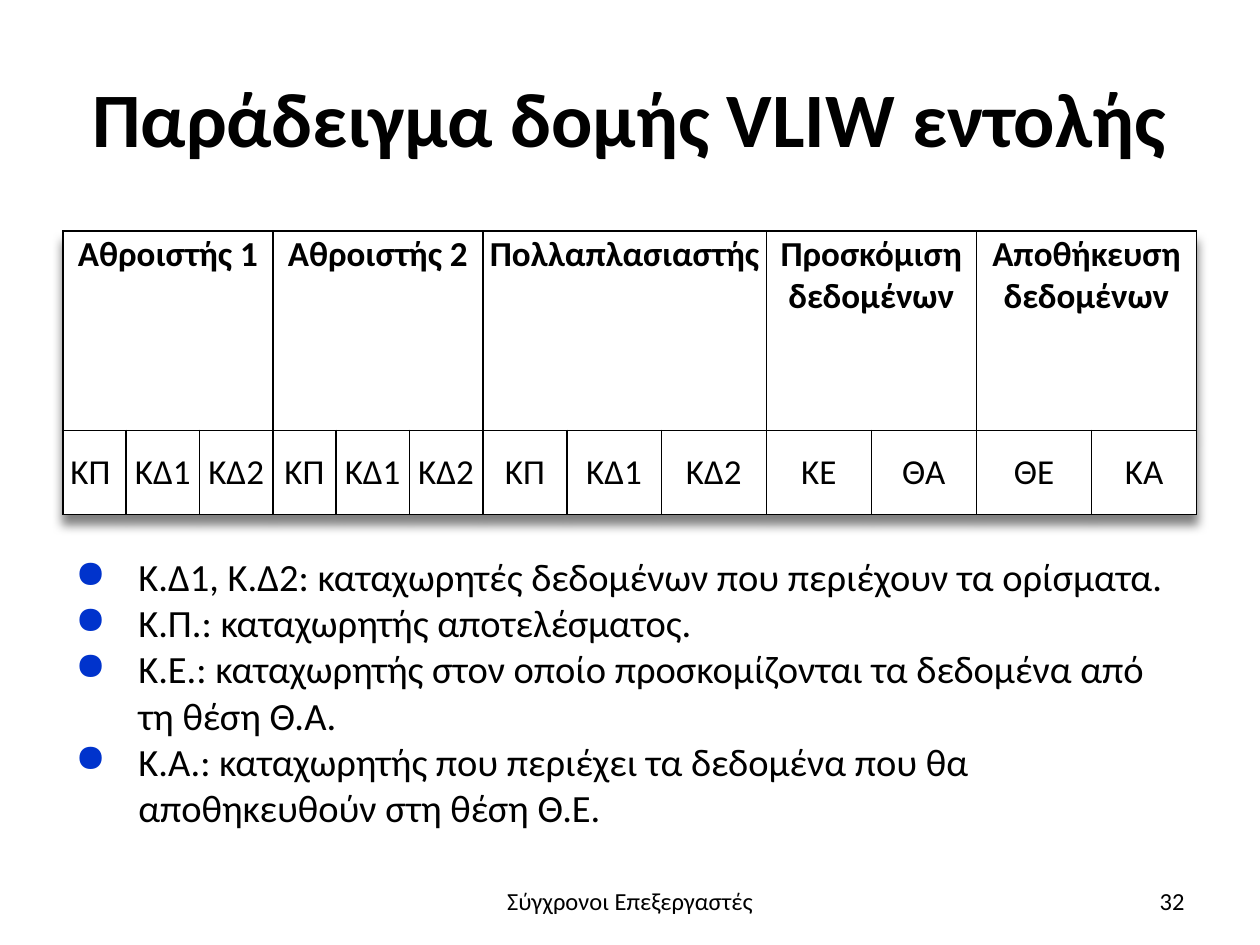
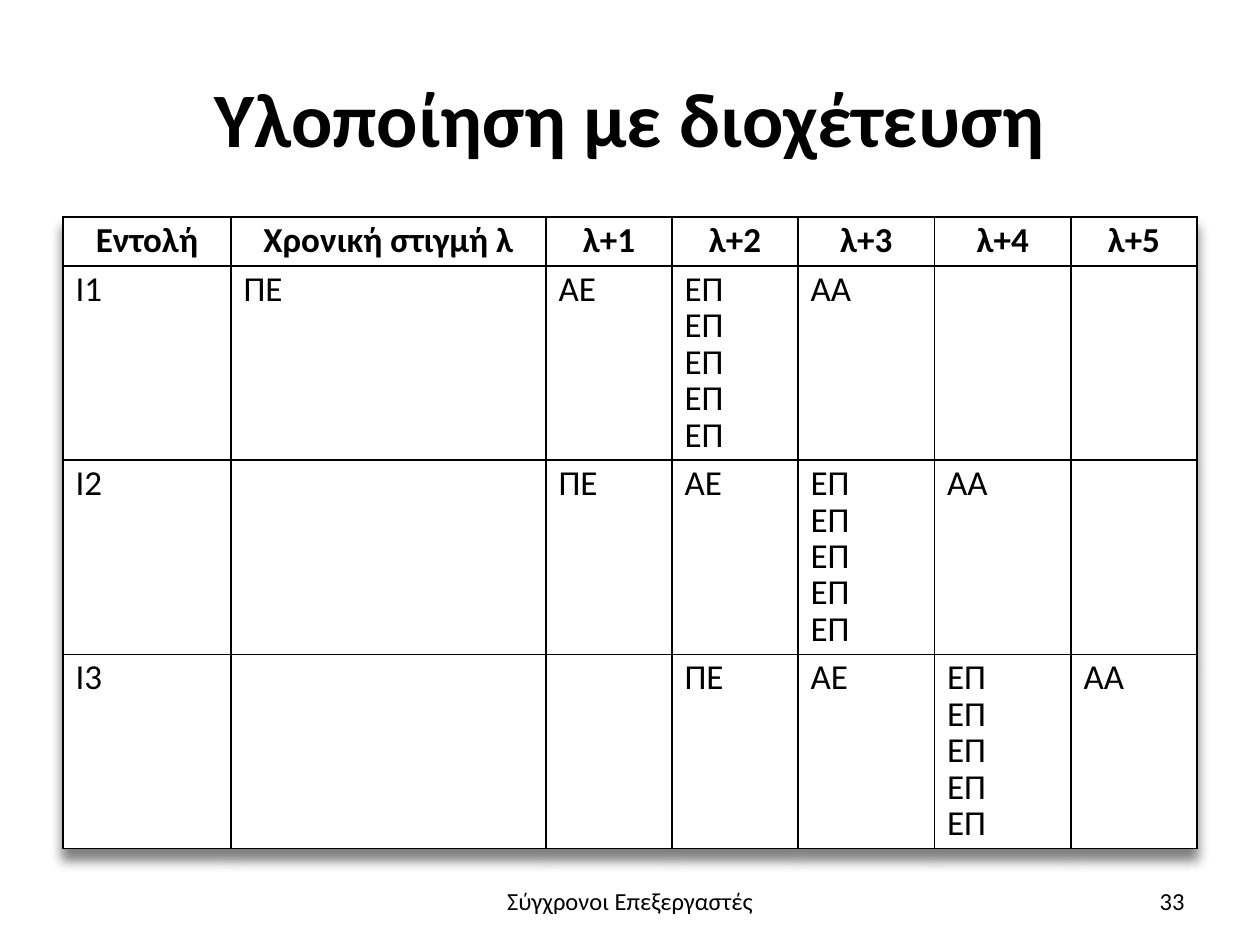
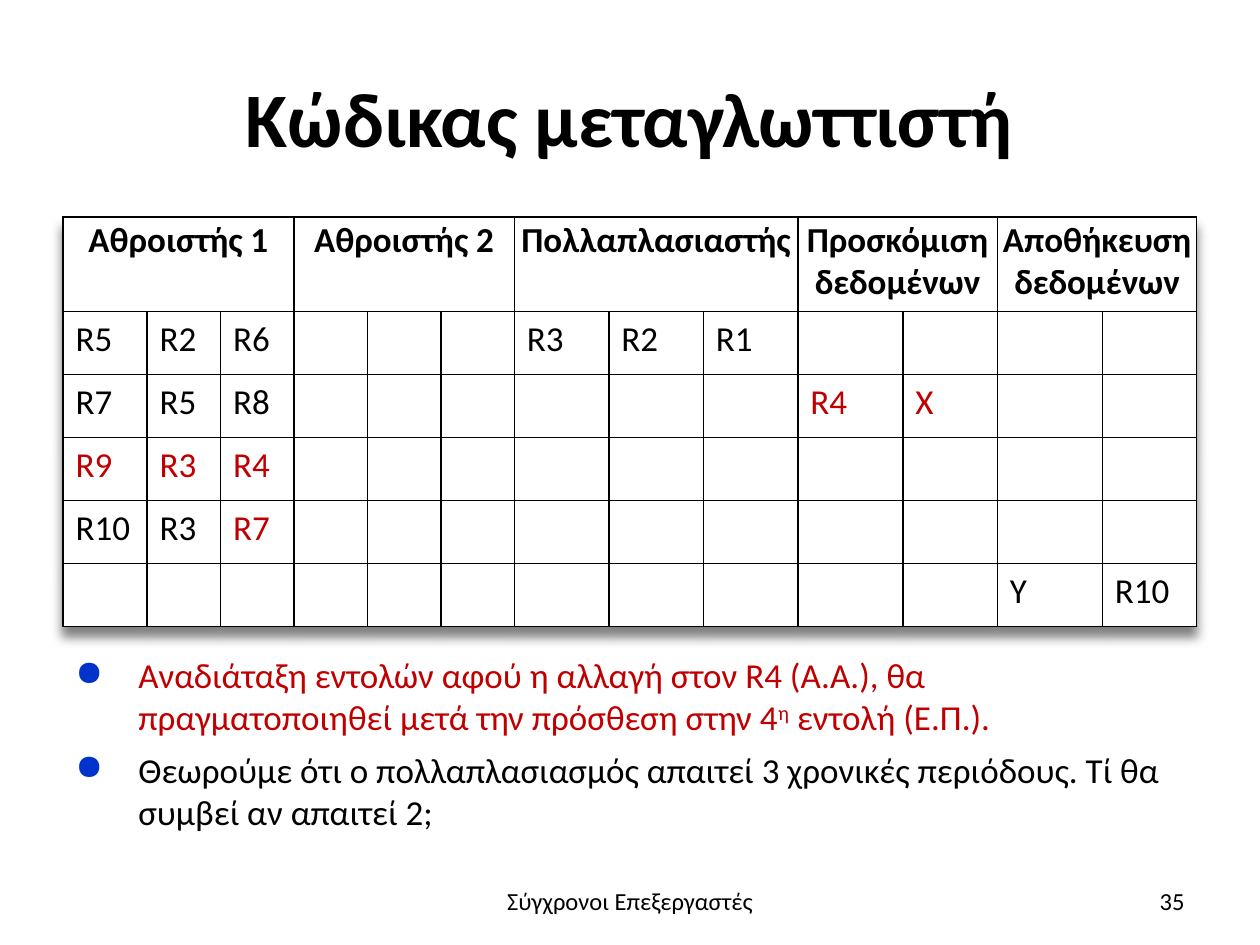
import dataclasses

import lxml.etree
import pptx
import pptx.dml.color
import pptx.enum.text
import pptx.oxml
import pptx.oxml.ns
import pptx.util

Pt = pptx.util.Pt
ALIGN = pptx.enum.text.PP_ALIGN
ANCHOR = pptx.enum.text.MSO_ANCHOR


@dataclasses.dataclass(frozen=True)
class Theme:
    font: str = "Calibri"
    ink: str = "000000"
    paper: str = "FFFFFF"
    accent: str = "C00000"
    bullet: str = "0033CC"
    title_size: int = 44
    list_size: int = 22
    table_size: int = 20
    footer_size: int = 14
    margin: int = 36
    border: int = 1
    tight_insets: tuple = (1, 1, 1, 1)
    normal_insets: tuple = (7.2, 3.6, 7.2, 3.6)


THEME = Theme()
FOOTER = "Σύγχρονοι Επεξεργαστές"
UNITS = [
    ("Αθροιστής 1", 3),
    ("Αθροιστής 2", 3),
    ("Πολλαπλασιαστής", 3),
    ("Προσκόμιση δεδομένων", 2),
    ("Αποθήκευση δεδομένων", 2),
]


def add_xml(parent, tag, **attributes):
    return lxml.etree.SubElement(parent, pptx.oxml.ns.qn(tag), attributes)


def add_run(paragraph, text, size, color=THEME.ink, bold=False, superscript=False):
    run = paragraph.add_run()
    run.text = text
    run.font.name = THEME.font
    run.font.size = Pt(size)
    run.font.bold = bold
    run.font.color.rgb = pptx.dml.color.RGBColor.from_string(color)
    if superscript:
        run._r.get_or_add_rPr().set("baseline", "30000")


def add_text_frame(slide, left, top, width, height, anchor=ANCHOR.TOP):
    shape = slide.shapes.add_textbox(Pt(left), Pt(top), Pt(width), Pt(height))
    frame = shape.text_frame
    frame.word_wrap = True
    frame.vertical_anchor = anchor
    return frame


def add_label(slide, text, box, size, align=ALIGN.CENTER, bold=False):
    paragraph = add_text_frame(slide, *box, anchor=ANCHOR.MIDDLE).paragraphs[0]
    paragraph.alignment = align
    add_run(paragraph, text, size, bold=bold)


def add_slide(presentation, title, number):
    slide = presentation.slides.add_slide(presentation.slide_layouts[6])
    add_label(slide, title, (THEME.margin, 21.6, 648, 90), THEME.title_size, bold=True)
    add_label(slide, FOOTER, (246, 500.4, 228, 28.8), THEME.footer_size)
    add_label(slide, str(number), (516, 500.4, 168, 28.8), THEME.footer_size, ALIGN.RIGHT)
    return slide


def add_bullets(slide, top, height, items, size, gap=0):
    frame = add_text_frame(slide, THEME.margin, top, 648, height)
    for index, runs in enumerate(items):
        paragraph = frame.paragraphs[0] if index == 0 else frame.add_paragraph()
        paragraph.space_before = Pt(gap if index else 0)
        properties = paragraph._p.get_or_add_pPr()
        properties.set("marL", str(Pt(36)))
        properties.set("indent", str(-Pt(36)))
        add_xml(add_xml(properties, "a:buClr"), "a:srgbClr", val=THEME.bullet)
        add_xml(properties, "a:buChar", char="●")
        for text, options in runs:
            add_run(paragraph, text, size, **options)


def add_shadow(table):
    effects = pptx.oxml.parse_xml(f"<a:effectLst {pptx.oxml.ns.nsdecls('a')}/>")
    shadow = add_xml(
        effects, "a:outerShdw", blurRad=str(Pt(6)), dist=str(Pt(6)),
        dir="5400000", algn="t", rotWithShape="0",
    )
    color = add_xml(shadow, "a:srgbClr", val=THEME.ink)
    add_xml(color, "a:alpha", val="50000")
    table._tbl.tblPr.insert(0, effects)


def style_cell(cell):
    cell.fill.solid()
    cell.fill.fore_color.rgb = pptx.dml.color.RGBColor.from_string(THEME.paper)
    properties = cell._tc.get_or_add_tcPr()
    for index, side in enumerate(("L", "R", "T", "B")):
        line = add_xml(properties, f"a:ln{side}", w=str(Pt(THEME.border)))
        add_xml(add_xml(line, "a:solidFill"), "a:srgbClr", val=THEME.ink)
        properties.insert(index, line)


def add_table(slide, top, columns, rows):
    frame = slide.shapes.add_table(
        len(rows), len(columns), Pt(THEME.margin), Pt(top), Pt(sum(columns)), Pt(sum(rows))
    )
    table = frame.table
    table.first_row = False
    table.horz_banding = False
    for column, width in zip(table.columns, columns):
        column.width = Pt(width)
    for row, height in zip(table.rows, rows):
        row.height = Pt(height)
    for cell in table.iter_cells():
        style_cell(cell)
    add_shadow(table)
    return table


def fill_cell(cell, text, insets=THEME.normal_insets, align=ALIGN.LEFT,
              anchor=ANCHOR.TOP, spacing=1.0, **options):
    cell.margin_left, cell.margin_top, cell.margin_right, cell.margin_bottom = map(Pt, insets)
    cell.vertical_anchor = anchor
    frame = cell.text_frame
    for index, line in enumerate(text.split("\n")):
        paragraph = frame.paragraphs[0] if index == 0 else frame.add_paragraph()
        paragraph.alignment = align
        paragraph.line_spacing = spacing
        add_run(paragraph, line, THEME.table_size, **options)


def fill_unit_header(table):
    column = 0
    for name, span in UNITS:
        cell = table.cell(0, column)
        cell.merge(table.cell(0, column + span - 1))
        fill_cell(cell, name, THEME.tight_insets, ALIGN.CENTER, bold=True)
        column += span


def add_structure_slide(presentation):
    slide = add_slide(presentation, "Παράδειγμα δομής VLIW εντολής", 32)
    columns = [36, 42, 42] * 2 + [48, 54, 60, 60, 60, 66, 60]
    table = add_table(slide, 132, columns, [114, 48])
    fill_unit_header(table)
    fields = ["ΚΠ ", "ΚΔ1", "ΚΔ2"] + ["ΚΠ", "ΚΔ1", "ΚΔ2"] * 2 + ["ΚΕ", "ΘΑ", "ΘΕ", "ΚΑ"]
    for column, field in enumerate(fields):
        fill_cell(table.cell(1, column), field, THEME.tight_insets, ALIGN.CENTER, ANCHOR.MIDDLE)
    definitions = [
        "Κ.Δ1, Κ.Δ2: καταχωρητές δεδομένων που περιέχουν τα ορίσματα.",
        "Κ.Π.: καταχωρητής αποτελέσματος.",
        "Κ.Ε.: καταχωρητής στον οποίο προσκομίζονται τα δεδομένα από τη θέση Θ.Α.",
        "Κ.Α.: καταχωρητής που περιέχει τα δεδομένα που θα αποθηκευθούν στη θέση Θ.Ε.",
    ]
    add_bullets(slide, 312.5, 167, [[(text, {})] for text in definitions], THEME.list_size)


def add_pipeline_slide(presentation):
    slide = add_slide(presentation, "Υλοποίηση με διοχέτευση", 33)
    table = add_table(slide, 124, [96, 180, 72, 72, 78, 78, 72], [28] + [111] * 3)
    headings = ["Εντολή", "Χρονική στιγμή λ"] + [f"λ+{step}" for step in range(1, 6)]
    for column, heading in enumerate(headings):
        fill_cell(table.cell(0, column), heading, align=ALIGN.CENTER, spacing=0.85, bold=True)
    stages = ["ΠΕ", "ΑΕ", "\n".join(["ΕΠ"] * 5), "ΑΑ"]
    for row in range(1, 4):
        fill_cell(table.cell(row, 0), f"Ι{row}", spacing=0.85)
        for column, stage in enumerate(stages, start=row):
            fill_cell(table.cell(row, column), stage, spacing=0.85)


def add_compiler_slide(presentation):
    slide = add_slide(presentation, "Κώδικας μεταγλωττιστή", 35)
    columns = [48] + [42] * 5 + [54] * 3 + [60, 54] * 2
    table = add_table(slide, 124, columns, [54] + [36] * 5)
    fill_unit_header(table)
    operations = [
        (1, 0, ["R5", "R2", "R6"]),
        (1, 6, ["R3", "R2", "R1"]),
        (2, 0, ["R7", "R5", "R8"]),
        (2, 9, ["R4", "X"]),
        (3, 0, ["R9", "R3", "R4"]),
        (4, 0, ["R10", "R3", "R7"]),
        (5, 11, ["Y", "R10"]),
    ]
    reordered = {(2, 9), (2, 10), (3, 0), (3, 1), (3, 2), (4, 2)}
    for row, first_column, operands in operations:
        for column, operand in enumerate(operands, start=first_column):
            color = THEME.accent if (row, column) in reordered else THEME.ink
            fill_cell(table.cell(row, column), operand, color=color)
    accent = {"color": THEME.accent}
    remarks = [
        [
            ("Αναδιάταξη εντολών αφού η αλλαγή στον R4 (Α.Α.), θα πραγματοποιηθεί "
             "μετά την πρόσθεση στην 4", accent),
            ("η", {"color": THEME.accent, "superscript": True}),
            (" εντολή (Ε.Π.).", accent),
        ],
        [("Θεωρούμε ότι ο πολλαπλασιασμός απαιτεί 3 χρονικές περιόδους. "
          "Τί θα συμβεί αν απαιτεί 2;", {})],
    ]
    add_bullets(slide, 370, 110, remarks, THEME.table_size, gap=6)


def main():
    presentation = pptx.Presentation()
    presentation.slide_width = Pt(720)
    presentation.slide_height = Pt(540)
    add_structure_slide(presentation)
    add_pipeline_slide(presentation)
    add_compiler_slide(presentation)
    presentation.save("out.pptx")


if __name__ == "__main__":
    main()
